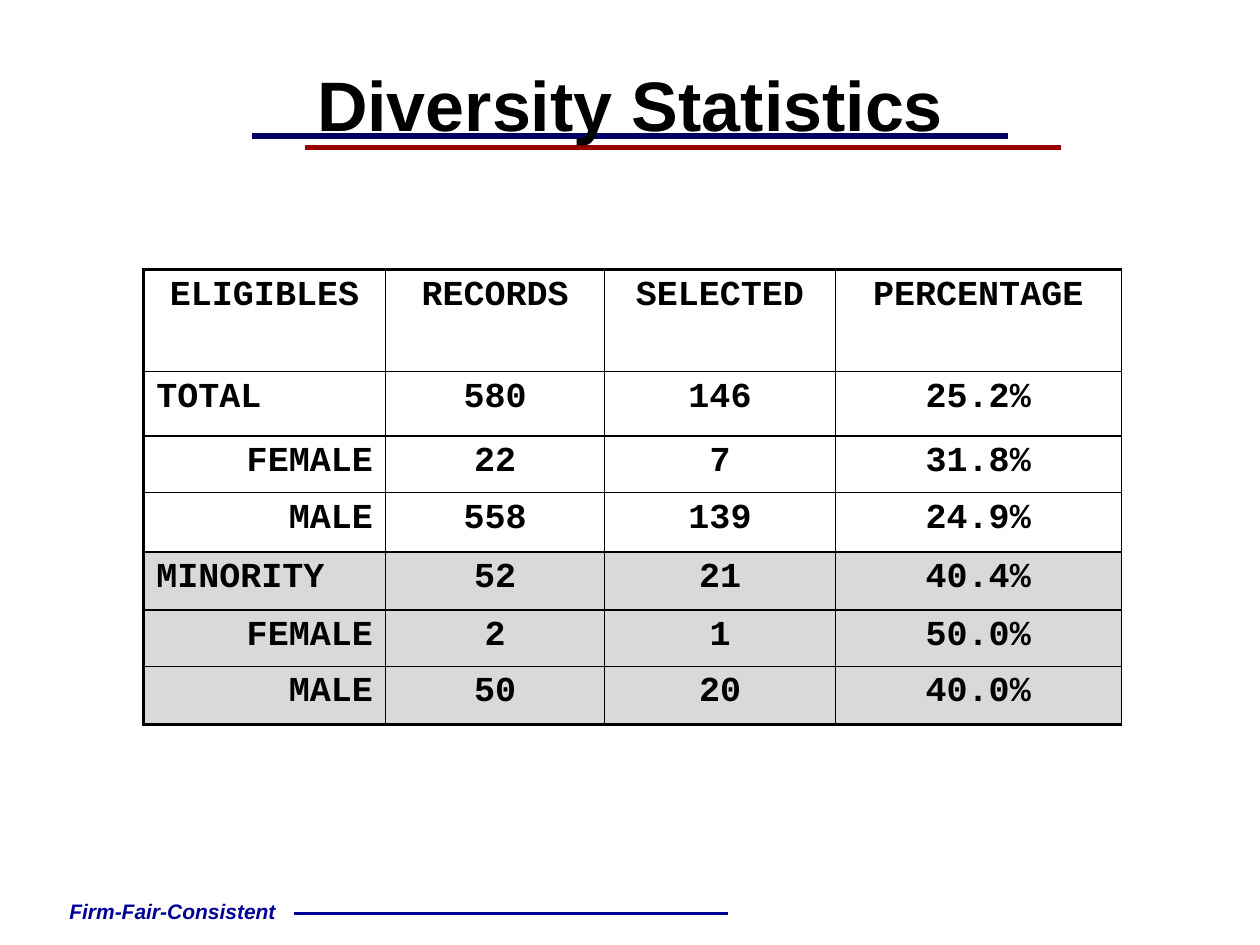
import pptx
import pptx.dml.color
import pptx.enum.shapes
import pptx.enum.text
import pptx.oxml.ns
import pptx.util
from lxml import etree

Inches = pptx.util.Inches
Pt = pptx.util.Pt
ALIGN = pptx.enum.text.PP_ALIGN
ANCHOR = pptx.enum.text.MSO_ANCHOR
qn = pptx.oxml.ns.qn

BLACK, NAVY, BLUE, RED, GREY = "000000", "000066", "000099", "990000", "D9D9D9"
COLUMN_WIDTHS = [1.92, 1.74, 1.83, 2.27]
ROW_HEIGHTS = [0.81, 0.51, 0.45, 0.47, 0.46, 0.45, 0.46]
FIRST_MINORITY_ROW = 4
THIN, THICK = 1, 2.25
STATISTICS = [
    ["ELIGIBLES", "RECORDS", "SELECTED", "PERCENTAGE"],
    ["TOTAL", "580", "146", "25.2%"],
    ["FEMALE", "22", "7", "31.8%"],
    ["MALE", "558", "139", "24.9%"],
    ["MINORITY", "52", "21", "40.4%"],
    ["FEMALE", "2", "1", "50.0%"],
    ["MALE", "50", "20", "40.0%"],
]
GROUP_ALIGNMENT = {
    "TOTAL": ALIGN.LEFT,
    "MINORITY": ALIGN.LEFT,
    "FEMALE": ALIGN.RIGHT,
    "MALE": ALIGN.RIGHT,
}


def color(hex_string):
    return pptx.dml.color.RGBColor.from_string(hex_string)


def write(text_frame, text, size, font_name, hex_color, alignment, italic=False):
    paragraph = text_frame.paragraphs[0]
    paragraph.alignment = alignment
    paragraph.space_before = Pt(0)
    run = paragraph.add_run()
    run.text = text
    values = {"size": Pt(size), "name": font_name, "bold": True, "italic": italic}
    for name, value in values.items():
        setattr(run.font, name, value)
    run.font.color.rgb = color(hex_color)


def set_frame(text_frame, anchor, top=0.0, side=0.0):
    values = {
        "word_wrap": True,
        "auto_size": pptx.enum.text.MSO_AUTO_SIZE.NONE,
        "vertical_anchor": anchor,
        "margin_left": Inches(side),
        "margin_right": Inches(side),
        "margin_top": Inches(top),
        "margin_bottom": 0,
    }
    for name, value in values.items():
        setattr(text_frame, name, value)


def add_rule(slide, left, right, y, hex_color, width):
    rule = slide.shapes.add_connector(
        pptx.enum.shapes.MSO_CONNECTOR.STRAIGHT,
        Inches(left), Inches(y), Inches(right), Inches(y))
    rule.line.color.rgb = color(hex_color)
    rule.line.width = Pt(width)
    etree.SubElement(rule._element.spPr, qn("a:effectLst"))


def add_motto(slide):
    box = slide.shapes.add_textbox(Inches(0.33), Inches(7.08), Inches(2.08), Inches(0.3))
    set_frame(box.text_frame, ANCHOR.MIDDLE)
    write(box.text_frame, "Firm-Fair-Consistent", 12, "Arial", BLUE, ALIGN.CENTER, italic=True)


def place_title(slide):
    """Fill the title placeholder and bring it in front of the rules."""
    title = slide.shapes.title
    bounds = {"left": 0.75, "top": 0.48, "width": 8.5, "height": 1.25}
    for name, value in bounds.items():
        setattr(title, name, Inches(value))
    set_frame(title.text_frame, ANCHOR.TOP, top=0.01, side=0.1)
    write(title.text_frame, "Diversity Statistics", 40, "Arial", BLACK, ALIGN.CENTER)
    slide.shapes._spTree.append(title._element)


def set_borders(cell, widths):
    properties = cell._tc.get_or_add_tcPr()
    for side, width in widths.items():
        line = etree.SubElement(properties, qn(f"a:ln{side}"), w=str(Pt(width)))
        fill = etree.SubElement(line, qn("a:solidFill"))
        etree.SubElement(fill, qn("a:srgbClr"), val=BLACK)


def fill_cell(cell, row, column):
    text = STATISTICS[row][column]
    set_borders(cell, {
        "L": THICK if column == 0 else THIN,
        "R": THIN,
        "T": THICK if row == 0 else THIN,
        "B": THICK if row == len(STATISTICS) - 1 else THIN,
    })
    if row >= FIRST_MINORITY_ROW:
        cell.fill.solid()
        cell.fill.fore_color.rgb = color(GREY)
    else:
        cell.fill.background()
    write(cell.text_frame, text, 20, "Courier New", BLACK,
          GROUP_ALIGNMENT.get(text, ALIGN.CENTER))


def add_statistics_table(slide):
    table = slide.shapes.add_table(
        len(ROW_HEIGHTS), len(COLUMN_WIDTHS), Inches(1.14), Inches(2.14),
        Inches(sum(COLUMN_WIDTHS)), Inches(sum(ROW_HEIGHTS))).table
    table.first_row = table.horz_banding = False
    for column, width in zip(table.columns, COLUMN_WIDTHS):
        column.width = Inches(width)
    for row, height in zip(table.rows, ROW_HEIGHTS):
        row.height = Inches(height)
    for row in range(len(ROW_HEIGHTS)):
        for column in range(len(COLUMN_WIDTHS)):
            fill_cell(table.cell(row, column), row, column)


def main():
    presentation = pptx.Presentation()
    presentation.slide_width = Inches(10)
    presentation.slide_height = Inches(7.5)
    slide = presentation.slides.add_slide(presentation.slide_layouts.get_by_name("Title Only"))
    add_rule(slide, 2, 8, 1.08, NAVY, 3)
    add_rule(slide, 2.42, 8.42, 1.17, RED, 3)
    add_rule(slide, 2.33, 5.78, 7.25, BLUE, 2.25)
    add_motto(slide)
    place_title(slide)
    add_statistics_table(slide)
    presentation.save("out.pptx")


if __name__ == "__main__":
    main()
